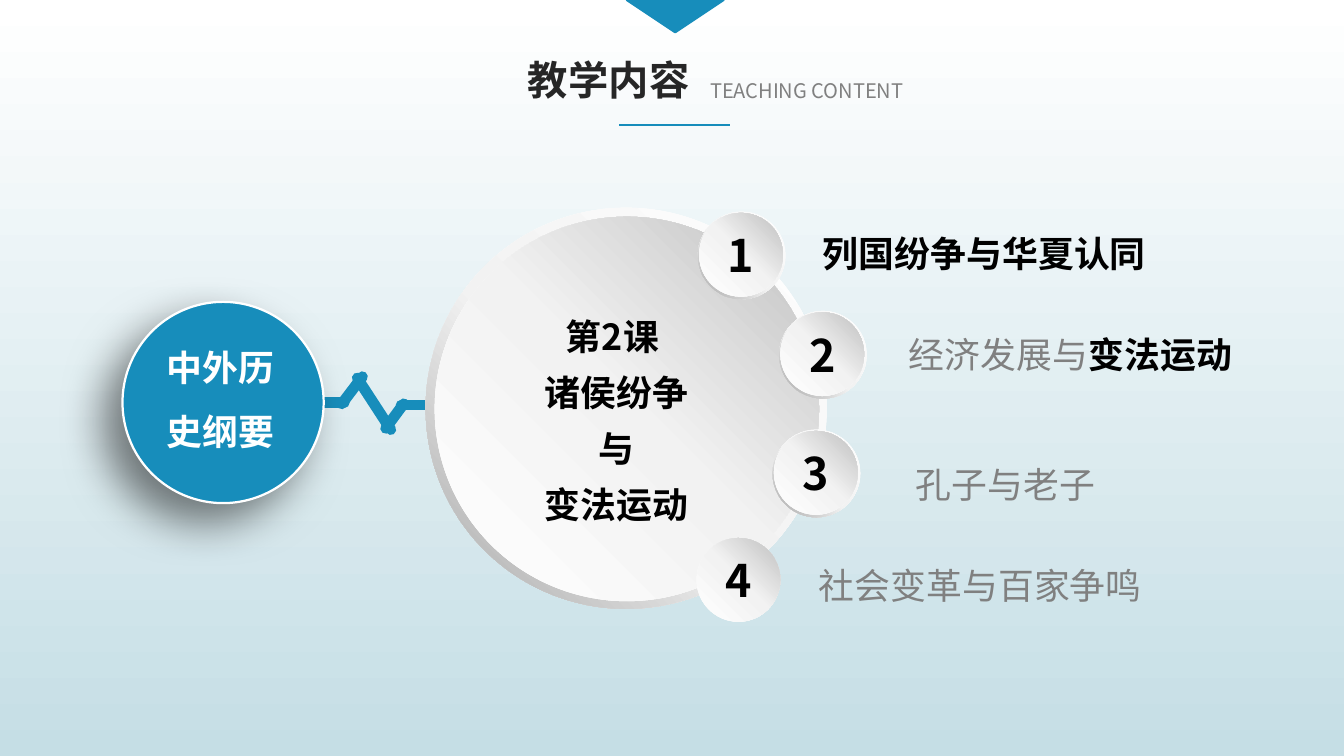
import copy

import pptx
import pptx.dml.color
import pptx.enum.shapes
import pptx.enum.text
import pptx.oxml
import pptx.oxml.ns
import pptx.util
from lxml import etree

Inches, Pt = pptx.util.Inches, pptx.util.Pt
RGBColor = pptx.dml.color.RGBColor
Shapes = pptx.enum.shapes.MSO_SHAPE
Align = pptx.enum.text.PP_ALIGN
Anchor = pptx.enum.text.MSO_ANCHOR
AutoSize = pptx.enum.text.MSO_AUTO_SIZE
qn = pptx.oxml.ns.qn

FONT = "Noto Sans CJK SC"
BLUE = RGBColor(0x17, 0x8D, 0xBB)
WHITE = RGBColor(0xFF, 0xFF, 0xFF)
BLACK = RGBColor(0x00, 0x00, 0x00)
DARK = RGBColor(0x26, 0x26, 0x26)
GRAY = RGBColor(0x80, 0x80, 0x80)
PALE = RGBColor(0xF2, 0xF2, 0xF2)
SILVER = RGBColor(0xBF, 0xBF, 0xBF)
STEEL = RGBColor(0xA6, 0xA6, 0xA6)
MIST = RGBColor(0xC5, 0xDE, 0xE5)

RING_STOPS = [(0, WHITE), (0.55, PALE), (1, STEEL)]
DISC_STOPS = [(0, WHITE), (0.51, PALE), (1, SILVER)]


def write(paragraph, text, *, size=20, color=BLACK, bold=False):
    """Add a formatted run to a paragraph."""
    run = paragraph.add_run()
    run.text = text
    run.font.name = FONT
    run.font.size = Pt(size)
    run.font.bold = bold
    run.font.color.rgb = color
    etree.SubElement(run.font._element, qn("a:ea"), typeface=FONT)


def paint_gradient(fill, owner, stops, angle):
    """Fill with any number of stops; the angle runs clockwise."""
    fill.gradient()
    fill.gradient_angle = (360 - angle) % 360
    stop_list = owner.find(".//" + qn("a:gsLst"))
    while len(stop_list) < len(stops):
        stop_list.append(copy.deepcopy(stop_list[0]))
    for stop, (position, color) in zip(fill.gradient_stops, stops):
        stop.position = position
        stop.color.rgb = color


class SlideBuilder:
    def __init__(self, presentation):
        self.slide = presentation.slides.add_slide(presentation.slide_layouts[5])
        paint_gradient(self.slide.background.fill, self.slide._element,
                       [(0, WHITE), (1, MIST)], 90)

    def fill_frame(self, shape, paragraphs, align=Align.LEFT, spacing=1.0,
                   margins=(0, 0), wrap=True, anchor=Anchor.TOP,
                   auto_size=AutoSize.SHAPE_TO_FIT_TEXT):
        """Each paragraph is a list of (text, format) runs."""
        frame = shape.text_frame
        frame.margin_left = frame.margin_right = Inches(margins[0])
        frame.margin_top = frame.margin_bottom = Inches(margins[1])
        frame.word_wrap = wrap
        frame.auto_size = auto_size
        frame.vertical_anchor = anchor
        for index, runs in enumerate(paragraphs):
            paragraph = frame.add_paragraph() if index else frame.paragraphs[0]
            paragraph.alignment = align
            paragraph.line_spacing = spacing
            for text, style in runs:
                write(paragraph, text, **style)

    def title(self, box, text, **style):
        shape = self.slide.shapes.title
        shape.left, shape.top, shape.width, shape.height = map(Inches, box)
        self.fill_frame(shape, [[(text, style)]], align=Align.CENTER,
                        margins=(0.1, 0.05), wrap=False)

    def text(self, box, paragraphs, **layout):
        shape = self.slide.shapes.add_textbox(*map(Inches, box))
        self.fill_frame(shape, paragraphs, **layout)

    def shape(self, kind, box, color=None, stops=None, angle=0, line=None):
        shape = self.slide.shapes.add_shape(kind, *map(Inches, box))
        shape.shadow.inherit = False
        if stops:
            paint_gradient(shape.fill, shape._element, stops, angle)
        else:
            shape.fill.solid()
            shape.fill.fore_color.rgb = color
        if line is None:
            shape.line.fill.background()
        else:
            shape.line.color.rgb = line
            shape.line.width = Pt(1.25)
        return shape

    def ring(self, left, top, size):
        ring = self.shape(Shapes.DONUT, (left, top, size, size),
                          stops=RING_STOPS, angle=135)
        ring.adjustments[0] = 0.049

    def disc(self, left, top, size):
        return self.shape(Shapes.OVAL, (left, top, size, size),
                          stops=DISC_STOPS, angle=315)

    def badge(self, left, top, number, ringed):
        if ringed:
            self.ring(left - 0.01, top - 0.01, 0.68)
        self.fill_frame(self.disc(left, top, 0.65),
                        [[(number, dict(size=25, bold=True))]],
                        align=Align.CENTER, margins=(0.1, 0.05),
                        anchor=Anchor.MIDDLE, auto_size=AutoSize.NONE)

    def line(self, start, end, width, cap="flat"):
        connector = self.slide.shapes.add_connector(
            pptx.enum.shapes.MSO_CONNECTOR.STRAIGHT, *map(Inches, start + end))
        connector.line.color.rgb = BLUE
        connector.line.width = Pt(width)
        properties = connector._element.spPr
        properties.find(qn("a:ln")).set("cap", cap)
        etree.SubElement(properties, qn("a:effectLst"))

    def cast_shadow(self, shape, blur, distance, direction, opacity):
        effects = shape._element.spPr.find(qn("a:effectLst"))
        shadow = etree.SubElement(
            effects, qn("a:outerShdw"), blurRad=str(Pt(blur)), dist=str(Pt(distance)),
            dir=str(direction * 60000), algn="ctr", rotWithShape="0")
        color = etree.SubElement(shadow, qn("a:srgbClr"), val=str(BLACK))
        etree.SubElement(color, qn("a:alpha"), val=str(opacity * 1000))


def main():
    presentation = pptx.Presentation()
    presentation.slide_width = Inches(10.42)
    presentation.slide_height = Inches(5.86)
    builder = SlideBuilder(presentation)
    strong, muted = dict(bold=True), dict(color=GRAY)

    # Heading
    builder.text((5.41, 0.59, 1.69, 0.23),
                 [[("TEACHING CONTENT", dict(size=11.2, color=GRAY))]],
                 align=Align.CENTER, margins=(0.04, 0.02), wrap=False)
    builder.title((3.99, 0.38, 1.46, 0.48), "教学内容", size=22.5, color=DARK, bold=True)
    marker = builder.shape(Shapes.ISOSCELES_TRIANGLE, (4.86, 0, 0.75, 0.25),
                           color=BLUE, line=BLUE)
    marker.rotation = 180
    builder.line((4.8, 0.97), (5.66, 0.97), 0.75)

    # Pulse line between the circles
    for start, end in [((2.18, 3.12), (2.67, 3.12)),
                       ((3.11, 3.14), (3.52, 3.14)),
                       ((2.65, 3.13), (2.81, 2.92)),
                       ((2.99, 3.32), (3.13, 3.13)),
                       ((3.03, 3.33), (2.77, 2.93))]:
        builder.line(start, end, 6, cap="rnd")

    # Course circle
    course = builder.shape(Shapes.OVAL, (0.95, 2.34, 1.56, 1.56), color=BLUE, line=WHITE)
    builder.cast_shadow(course, blur=25, distance=15, direction=135, opacity=50)
    builder.text((1.25, 2.51, 0.92, 1.01),
                 [[("中外历史纲要", dict(color=WHITE, bold=True))]],
                 align=Align.CENTER, spacing=1.5)

    # Lesson circle
    builder.ring(3.3, 1.61, 3.11)
    builder.disc(3.37, 1.68, 2.98)
    lesson = ["第2课 ", "诸侯纷争", "与", "变法运动"]
    builder.text((3.82, 2.34, 1.92, 1.75), [[(text, strong)] for text in lesson],
                 align=Align.CENTER, spacing=1.3)

    # Numbered badges
    badges = [(5.42, 1.65), (6.05, 2.42), (6, 3.34), (5.4, 4.17)]
    for number, (left, top) in enumerate(badges, start=1):
        builder.badge(left, top, str(number), ringed=number < 4)

    # Section names
    sections = [
        ((6.38, 1.63, 2.98, 0.5), [("列国纷争与华夏认同", strong)], dict(spacing=1.5)),
        ((6.92, 2.58, 2.76, 0.34), [("经济发展与", muted), ("变法运动", strong)],
         dict(align=Align.CENTER)),
        ((7.1, 3.42, 3.03, 0.5), [("孔子与老子", muted)], dict(spacing=1.5)),
        ((6.25, 4.32, 2.73, 0.44), [("社会变革与百家争鸣", muted)],
         dict(margins=(0.1, 0.05), wrap=False)),
    ]
    for box, runs, layout in sections:
        builder.text(box, [runs], **layout)

    presentation.save("out.pptx")


if __name__ == "__main__":
    main()
